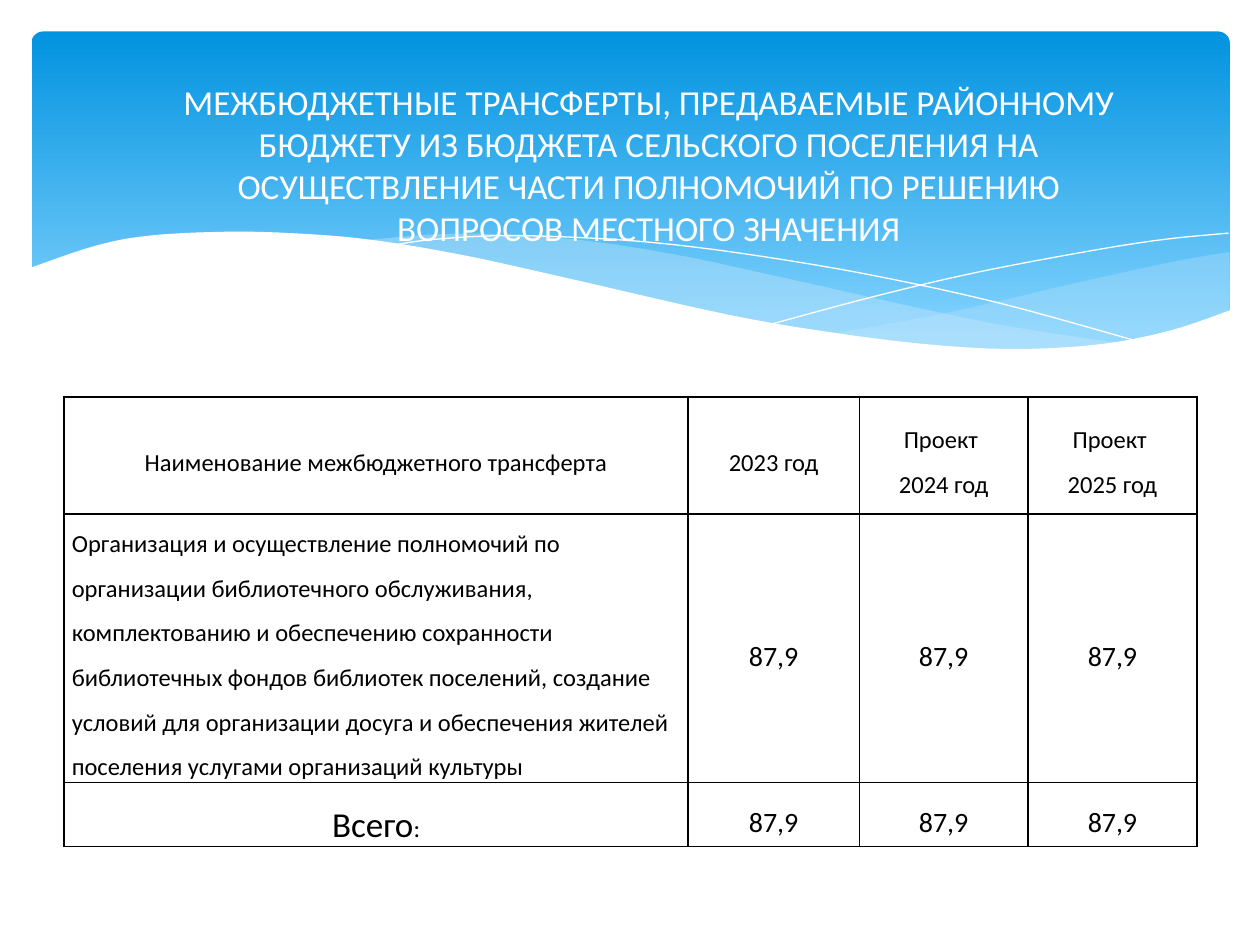
import pptx
import pptx.util
import pptx.dml.color
import pptx.enum.shapes
import pptx.enum.text
import pptx.oxml
from pptx.oxml.ns import nsdecls, qn
from pptx.util import Inches

COLORS = {"sky": "0293E0", "light": "83D3FE", "wave": "C6E7FC",
          "white": "FFFFFF", "black": "000000"}
RGB = {name: pptx.dml.color.RGBColor.from_string(c) for name, c in COLORS.items()}
FONT = "Calibri"
CENTER = pptx.enum.text.PP_ALIGN.CENTER
LEFT = pptx.enum.text.PP_ALIGN.LEFT
MIDDLE = pptx.enum.text.MSO_ANCHOR.MIDDLE


def smooth(points, steps=6):
    """Return points along a Catmull-Rom curve through the given points."""
    ends = [points[0]] + points + [points[-1]]
    curve = [points[0]]
    for a, b, c, d in zip(ends, ends[1:], ends[2:], ends[3:]):
        for i in range(1, steps + 1):
            t = i / steps
            curve.append(tuple(
                0.5 * (2 * q + (r - p) * t + (2 * p - 5 * q + 4 * r - u) * t ** 2
                       + (3 * q - p - 3 * r + u) * t ** 3)
                for p, q, r, u in zip(a, b, c, d)))
    return curve


def add_run(p, text, size, color):
    r = p.add_run()
    r.text = text
    r.font.size = pptx.util.Pt(size)
    r.font.name = FONT
    r.font.bold = False
    r.font.color.rgb = RGB[color]


prs = pptx.Presentation()
prs.slide_width, prs.slide_height = Inches(10), Inches(7.5)
s = prs.slides.add_slide(prs.slide_layouts[5])

# Header panel
panel = s.shapes.add_shape(pptx.enum.shapes.MSO_SHAPE.ROUNDED_RECTANGLE,
                           Inches(0.25), Inches(0.25), Inches(9.51), Inches(2.7))
panel.adjustments[0] = 0.034
panel.shadow.inherit = False
panel.line.fill.background()
panel.fill.gradient()
panel.fill.gradient_angle = 270
for stop, position, color in zip(panel.fill.gradient_stops, (0, 0.9), ("sky", "light")):
    stop.position = position
    stop.color.rgb = RGB[color]

# Waves: points, fill colour (None for an open line), opacity in percent
right_wave = (smooth([(9.76, 2), (9.35, 2.07), (8.61, 2.23), (7.53, 2.48), (6.61, 2.65)])
              + smooth([(6.61, 2.65), (7.19, 2.72), (7.69, 2.77), (8.14, 2.78),
                        (8.63, 2.75), (9.05, 2.69), (9.42, 2.59), (9.76, 2.47)]))
middle_wave = (smooth([(8.93, 2.73), (8.07, 2.6), (7.41, 2.47), (6.29, 2.22), (5.41, 2.03),
                       (4.65, 1.91), (3.99, 1.86), (3.44, 1.86), (2.86, 1.91)])
               + smooth([(2.86, 1.91), (3.62, 2.03), (4.49, 2.22), (5.66, 2.48), (6.5, 2.64),
                         (7.22, 2.74), (7.85, 2.78), (8.38, 2.78), (8.93, 2.73)]))
falling_line = smooth([(3.09, 1.95), (3.44, 1.9), (4.01, 1.87), (4.69, 1.89), (5.33, 1.94),
                       (6.08, 2.04), (6.95, 2.19), (7.95, 2.41), (9.07, 2.72)])
rising_line = smooth([(6.13, 2.57), (6.95, 2.35), (7.76, 2.16), (8.66, 1.99),
                      (9.24, 1.9), (9.75, 1.85)])
front_wave = (smooth([(9.77, 2.46), (9.3, 2.62), (8.75, 2.73), (8.09, 2.77), (7.44, 2.74),
                      (6.68, 2.65), (5.79, 2.5), (4.47, 2.2), (3.65, 2.02), (2.92, 1.9),
                      (2.3, 1.85), (1.77, 1.84), (1.19, 1.87), (0.76, 1.95), (0.23, 2.13)])
              + [(0.23, 3.29), (9.77, 3.29)])
for points, color, opacity in ((right_wave, "wave", 29), (middle_wave, "wave", 40),
                               (falling_line, None, 100), (rising_line, None, 100),
                               (front_wave, "white", 100)):
    emu = [(Inches(x), Inches(y)) for x, y in points]
    builder = s.shapes.build_freeform(*emu[0], scale=1.0)
    builder.add_line_segments(emu[1:], close=color is not None)
    sp = builder.convert_to_shape()
    sp.shadow.inherit = False
    if color is None:
        sp.fill.background()
        sp.line.color.rgb = RGB["white"]
        sp.line.width = pptx.util.Pt(0)
        continue
    sp.line.fill.background()
    sp.fill.solid()
    sp.fill.fore_color.rgb = RGB[color]
    if opacity < 100:
        sp.element.spPr.find(qn("a:solidFill"))[0].append(pptx.oxml.parse_xml(
            f'<a:alpha {nsdecls("a")} val="{opacity * 1000}"/>'))

# Transfers table: each cell is a list of paragraphs, each a list of (text, size) runs
amounts = [[[("87,9", 16)]]] * 3
rows = [
    [[[("Наименование межбюджетного трансферта", 14)]],
     [[("2023 год", 14)]],
     [[("Проект ", 14)], [("2024 год", 14)]],
     [[("Проект ", 14)], [("2025 год", 14)]]],
    [[[("Организация и осуществление полномочий по организации библиотечного "
        "обслуживания, комплектованию и обеспечению сохранности библиотечных фондов "
        "библиотек поселений, создание условий для организации досуга и обеспечения "
        "жителей поселения услугами организаций культуры", 14)]]] + amounts,
    [[[("Всего", 20), (":", 14)]]] + amounts,
]
table = s.shapes.add_table(3, 4, Inches(0.51), Inches(3.15), Inches(8.99), Inches(3.31)).table
table.first_row = table.horz_banding = False
for column, width in zip(table.columns, (4.95, 1.36, 1.34, 1.34)):
    column.width = Inches(width)
for row, height in zip(table.rows, (0.93, 1.96, 0.42)):
    row.height = Inches(height)
for i, row in enumerate(rows):
    for j, paragraphs in enumerate(row):
        cell = table.cell(i, j)
        cell.vertical_anchor = MIDDLE
        cell.margin_left = cell.margin_right = Inches(0.06)
        cell.margin_top = cell.margin_bottom = 0
        cell.fill.background()
        tf = cell.text_frame
        for k, runs in enumerate(paragraphs):
            p = tf.add_paragraph() if k else tf.paragraphs[0]
            p.alignment = LEFT if (i, j) == (1, 0) else CENTER
            p.line_spacing = 1.5
            for text, size in runs:
                add_run(p, text, size, "black")
        tcPr = cell._tc.get_or_add_tcPr()
        for k, side in enumerate("LRTB"):
            tcPr.insert(k, pptx.oxml.parse_xml(
                f'<a:ln{side} {nsdecls("a")} w="12700"><a:solidFill>'
                f'<a:srgbClr val="{COLORS["black"]}"/></a:solidFill></a:ln{side}>'))

# Title, brought in front of the header panel
title = s.shapes.title
title.left, title.top = Inches(1.22), Inches(0.44)
title.width, title.height = Inches(7.86), Inches(1.73)
tf = title.text_frame
tf.word_wrap = True
tf.vertical_anchor = MIDDLE
p = tf.paragraphs[0]
p.alignment = CENTER
add_run(p, "МЕЖБЮДЖЕТНЫЕ ТРАНСФЕРТЫ, ПРЕДАВАЕМЫЕ РАЙОННОМУ БЮДЖЕТУ ИЗ БЮДЖЕТА "
           "СЕЛЬСКОГО ПОСЕЛЕНИЯ НА ОСУЩЕСТВЛЕНИЕ ЧАСТИ ПОЛНОМОЧИЙ ПО РЕШЕНИЮ "
           "ВОПРОСОВ МЕСТНОГО ЗНАЧЕНИЯ", 20, "white")
title.element.getparent().append(title.element)

prs.save("out.pptx")
